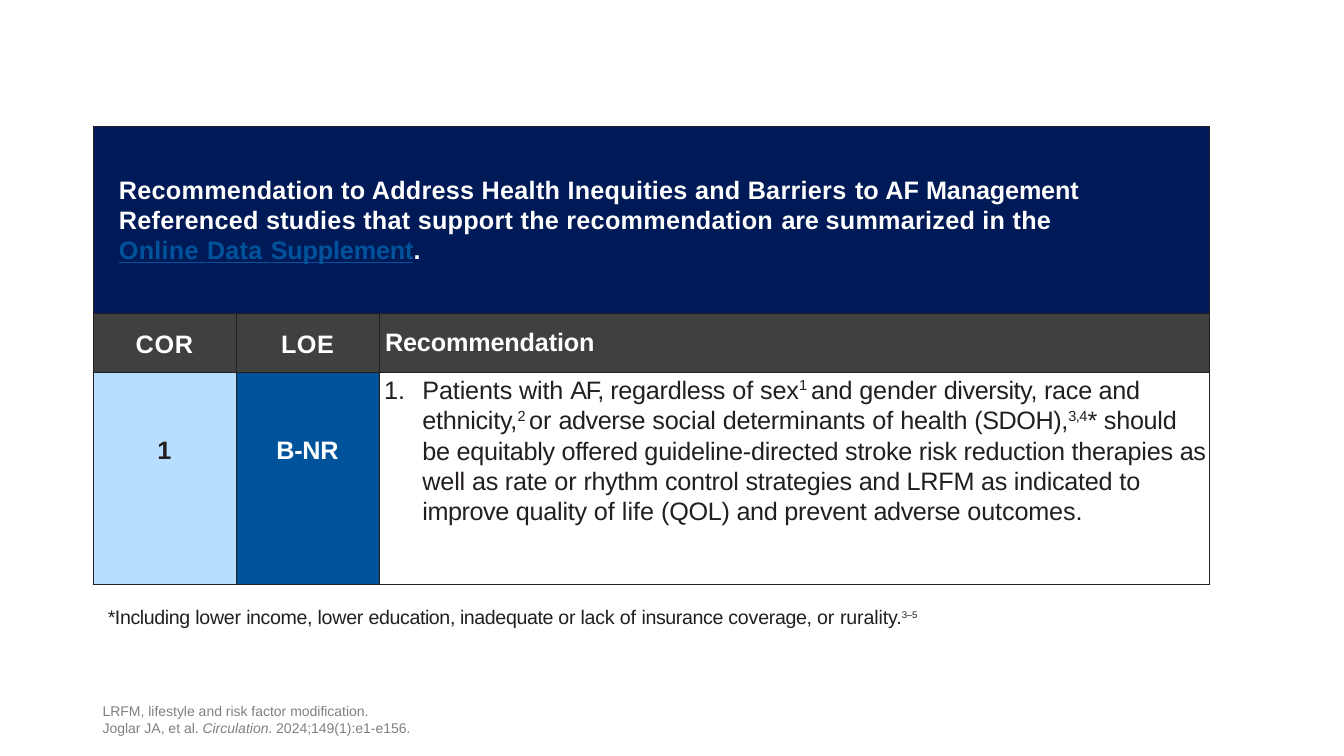
from lxml.etree import SubElement
from pptx import Presentation
from pptx.dml.color import RGBColor
from pptx.enum.text import MSO_ANCHOR, PP_ALIGN
from pptx.oxml.ns import qn
from pptx.util import Inches, Pt

WIDE, HIGH = Inches(13.33), Inches(7.5)
LEFT = 0.069
NAVY = RGBColor(0x00, 0x1A, 0x57)
BLUE = RGBColor(0x00, 0x53, 0x9B)
PALE = RGBColor(0xB8, 0xDE, 0xFF)
DARK = RGBColor(0x40, 0x40, 0x40)
GRAY = RGBColor(0x80, 0x80, 0x80)
INK = RGBColor(0x23, 0x1F, 0x20)
WHITE = RGBColor(0xFF, 0xFF, 0xFF)

TITLE = [("Recommendation to Address Health Inequities and Barriers ", 0.2),
         ("to ", -0.2), ("AF ", 0), ("Management", -0.1)]
STUDIES = [("Referenced studies that support the recommendation ", 0.2),
           ("are ", -0.2), ("summarized in the", 0.2)]
LINK = [("Online", 0.2), (" ", 0.7), ("Data", 0.2), (" ", 0.7),
        ("Supplement", -0.1)]
ADVICE = [
    ("Patients ", -0.1), ("with ", -0.1), ("AF, ", -0.8),
    ("regardless ", -0.2), ("of", 0), (" sex", -0.1), ("1 ", -0.1, 35),
    ("and ", -0.2), ("gender ", -0.1), ("diversity, ", -0.3),
    ("race and ethnicity,", -0.2), ("2 ", -0.4, 35), ("or ", 0),
    ("adverse", -0.3), (" social ", -0.1), ("determinants ", -0.2),
    ("of ", 0), ("health ", -0.2), ("(SDOH),", -0.3), ("3,4", -0.4, 35),
    ("* ", -0.3),
    ("should be equitably offered guideline-directed stroke risk "
     "reduction therapies ", -0.2),
    ("as ", -0.3), ("well ", -0.1), ("as ", -0.3), ("rate ", -0.2),
    ("or ", 0), ("rhythm ", -0.3), ("control strategies and LRFM ", -0.2),
    ("as ", -0.3), ("indicated ", -0.2), ("to ", 0), ("improve ", -0.3),
    ("quality ", -0.2), ("of life ", 0), ("(QOL) and prevent ", -0.2),
    ("adverse", -0.3), (" outcomes.", -0.1)]
NOTE = [
    ("*Including ", -0.3), ("lower ", -0.2), ("income, ", -0.3),
    ("lower ", -0.2), ("education, inadequate ", -0.3), ("or lack ", -0.2),
    ("of ", 0), ("insurance ", -0.3), ("cov", -0.2), ("erage, ", -0.3),
    ("or ", 0), ("rurality.", -0.1)]


def write(para, runs, size, color, bold=False, line=False, slant=False):
    """Add runs of (text, spacing[, raise]) to a paragraph."""
    for text, space, *lift in runs:
        run = para.add_run()
        run.text = text
        font = run.font
        font.name, font.size, font.bold = "Arial", Pt(size), bold
        font.underline, font.italic = line, slant
        font.color.rgb = color
        props = run._r.get_or_add_rPr()
        props.set("spc", str(round(space * 100)))
        if lift:
            props.set("baseline", str(lift[0] * 1000))


def indent(para, left, first=0):
    """Set a paragraph's left margin and first line indent in inches."""
    props = para._p.get_or_add_pPr()
    props.set("marL", str(Inches(left)))
    props.set("indent", str(Inches(first)))
    return props


def pad(item, left=0, top=0, right=0, bottom=0):
    """Set the inner margins of a cell or text frame in inches."""
    item.margin_left, item.margin_top = Inches(left), Inches(top)
    item.margin_right, item.margin_bottom = Inches(right), Inches(bottom)


def edge(cell):
    """Draw thin dark borders round a cell."""
    props = cell._tc.get_or_add_tcPr()
    for side in ("a:lnL", "a:lnR", "a:lnT", "a:lnB"):
        line = SubElement(props, qn(side), w=str(Pt(0.25)))
        fill = SubElement(line, qn("a:solidFill"))
        SubElement(fill, qn("a:srgbClr"), val=str(INK))


def paint(cell, color, middle=True, **room):
    """Fill a cell, set its margins and return its first paragraph."""
    cell.fill.solid()
    cell.fill.fore_color.rgb = color
    cell.vertical_anchor = MSO_ANCHOR.MIDDLE if middle else MSO_ANCHOR.TOP
    pad(cell, **room)
    return cell.text_frame.paragraphs[0]


def banner(cell):
    """Write the heading across the top of the table."""
    head = paint(cell, NAVY, left=0.2, top=0.2, bottom=0.2)
    more = cell.text_frame.add_paragraph()
    for para in (head, more):
        indent(para, 0.06)
        para.line_spacing = 1.07
    write(head, TITLE, 18, WHITE, True)
    write(more, STUDIES, 18, WHITE, True)
    more.add_line_break()
    write(more, LINK, 18, BLUE, True, line=True)
    write(more, [(".", -0.1)], 18, WHITE, True)


def grid(slide, left, top, width, height):
    """Build the recommendation table in its box."""
    frame = slide.shapes.add_table(3, 3, left, top, width, height)
    table = frame.table
    table.first_row = table.horz_banding = False
    for col, size in zip(table.columns, (1.42, 1.42, 8.23)):
        col.width = round(width * size / 11.07)
    for row, size in zip(table.rows, (1.86, 0.58, 2.11)):
        row.height = round(height * size / 4.55)
    for cell in table.iter_cells():
        edge(cell)
    table.cell(0, 0).merge(table.cell(0, 2))
    banner(table.cell(0, 0))

    marks = [("COR", 0.5, "1", -0.5, PALE, INK),
             ("LOE", 0.4, "B-NR", -0.2, BLUE, WHITE)]
    for col, (name, gap, mark, space, back, ink) in enumerate(marks):
        head = paint(table.cell(1, col), DARK, top=0.04)
        body = paint(table.cell(2, col), back, False, top=0.64)
        head.alignment = body.alignment = PP_ALIGN.CENTER
        write(head, [(name, gap)], 18, WHITE, True)
        write(body, [(mark, space)], 18, ink, True)

    head = paint(table.cell(1, 2), DARK)
    indent(head, 0.06)
    write(head, [("Recommendation", -0.1)], 18, WHITE, True)
    body = paint(table.cell(2, 2), WHITE, False, top=0.03)
    props = indent(body, 0.43, -0.38)
    SubElement(props, qn("a:buFont"), typeface="Arial")
    SubElement(props, qn("a:buAutoNum"), type="arabicPeriod")
    body.line_spacing = 1.07
    write(body, ADVICE, 18, INK)


def note(slide, *box):
    """Write the footnote under the table."""
    frame = slide.shapes.add_textbox(*box).text_frame
    frame.word_wrap = True
    pad(frame, top=0.01)
    para = frame.paragraphs[0]
    indent(para, 0.04, 0.11)
    para.line_spacing = 1.07
    write(para, NOTE, 14, INK)
    write(para, [("3–5", -0.1, 35)], 12, INK)


def source(slide, *box):
    """Write the abbreviation and citation at the foot."""
    frame = slide.shapes.add_textbox(*box).text_frame
    frame.word_wrap = True
    frame.vertical_anchor = MSO_ANCHOR.BOTTOM
    write(frame.paragraphs[0],
          [("LRFM, lifestyle and risk factor modification.", 0)], 10, GRAY)
    cite = frame.add_paragraph()
    write(cite, [("Joglar JA, et al. ", 0)], 10, GRAY)
    write(cite, [("Circulation", 0)], 10, GRAY, slant=True)
    write(cite, [(". 2024;149(1):e1-e156.", 0)], 10, GRAY)


def place(left, top, width, height):
    """Turn shares of the slide into a box."""
    return (round(WIDE * left), round(HIGH * top),
            round(WIDE * width), round(HIGH * height))


def main():
    """Build and save the slide."""
    deck = Presentation()
    deck.slide_width, deck.slide_height = WIDE, HIGH
    slide = deck.slides.add_slide(deck.slide_layouts[6])
    grid(slide, Inches(0.92), Inches(1.25), Inches(11.07), Inches(4.55))
    note(slide, *place(LEFT, 0.796, 0.892, 0.033))
    source(slide, *place(LEFT, 0.927, 0.863, 0.053))
    deck.save("out.pptx")


if __name__ == "__main__":
    main()
